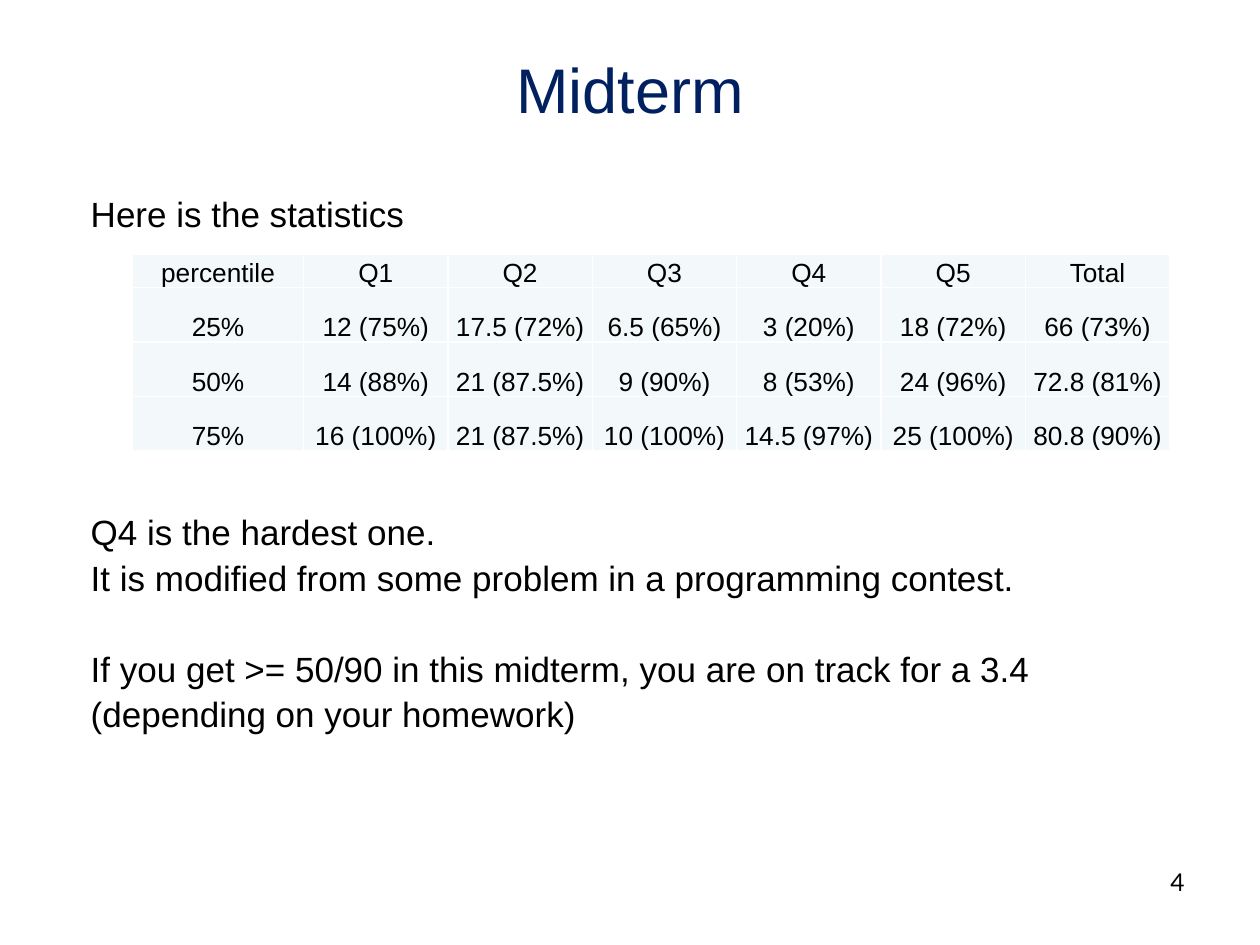
"""Build the midterm statistics slide."""
import dataclasses
import typing

import pptx
import pptx.dml.color
import pptx.enum.text
import pptx.oxml
import pptx.oxml.ns
import pptx.util

Cm = pptx.util.Cm
Pt = pptx.util.Pt
Align = pptx.enum.text.PP_ALIGN
Anchor = pptx.enum.text.MSO_ANCHOR


@dataclasses.dataclass(frozen=True)
class Theme:
    font: str = "Arial"
    number_font: str = "Lato"
    navy: str = "002060"
    black: str = "000000"
    cell_fill: str = "F3F9FA"
    border: str = "FFFFFF"
    title_size: int = 36
    body_size: int = 20
    table_size: int = 15
    number_size: int = 14
    line_pitch: int = 26


THEME = Theme()


@dataclasses.dataclass(frozen=True)
class Line:
    text: str
    lines_before: int = 0


@dataclasses.dataclass(frozen=True)
class TextBlock:
    left: float
    top: float
    width: float
    height: float
    lines: tuple[Line, ...]
    size: int
    font: str = THEME.font
    color: str = THEME.black
    align: Align = Align.LEFT
    inset_left: float = 0.25
    inset_top: float = 0.13
    line_pitch: typing.Optional[int] = None


@dataclasses.dataclass(frozen=True)
class Percentile:
    label: str
    scores: tuple[str, ...]


HEADING = Percentile("percentile", ("Q1", "Q2", "Q3", "Q4", "Q5", "Total"))
PERCENTILES = (
    Percentile("25%", ("12 (75%)", "17.5 (72%)", "6.5 (65%)", "3 (20%)", "18 (72%)", "66 (73%)")),
    Percentile("50%", ("14 (88%)", "21 (87.5%)", "9 (90%)", "8 (53%)", "24 (96%)", "72.8 (81%)")),
    Percentile("75%", ("16 (100%)", "21 (87.5%)", "10 (100%)", "14.5 (97%)", "25 (100%)", "80.8 (90%)")),
)

TITLE = TextBlock(1.27, 0.76, 22.86, 3.18, (Line("Midterm"),), THEME.title_size,
                  color=THEME.navy, align=Align.CENTER, inset_top=0.26)
REMARKS = TextBlock(
    1.27, 3.68, 22.86, 13.34,
    (
        Line("Here is the statistics"),
        Line("Q4 is the hardest one.", lines_before=6),
        Line("It is modified from some problem in a programming contest."),
        Line("If you get >= 50/90 in this midterm, you are on track for a 3.4", lines_before=1),
        Line("(depending on your homework)"),
    ),
    THEME.body_size, inset_left=0.56, line_pitch=THEME.line_pitch)
PAGE_NUMBER = TextBlock(18.21, 17.35, 5.92, 1.32, (Line("4"),), THEME.number_size,
                        font=THEME.number_font, align=Align.RIGHT)


def add_run(paragraph, text: str, size: int, font: str, color: str) -> None:
    run = paragraph.add_run()
    run.text = text
    run.font.size = Pt(size)
    run.font.name = font
    run.font.color.rgb = pptx.dml.color.RGBColor.from_string(color)


def add_text_block(slide, block: TextBlock) -> None:
    box = slide.shapes.add_textbox(Cm(block.left), Cm(block.top), Cm(block.width), Cm(block.height))
    frame = box.text_frame
    frame.word_wrap = True
    frame.vertical_anchor = Anchor.TOP
    frame.margin_left = Cm(block.inset_left)
    frame.margin_top = Cm(block.inset_top)
    for index, line in enumerate(block.lines):
        paragraph = frame.add_paragraph() if index else frame.paragraphs[0]
        paragraph.alignment = block.align
        if block.line_pitch:
            paragraph.line_spacing = Pt(block.line_pitch)
            if line.lines_before:
                paragraph.space_before = Pt(line.lines_before * block.line_pitch)
        add_run(paragraph, line.text, block.size, block.font, block.color)


def add_cell_borders(cell) -> None:
    properties = cell._tc.get_or_add_tcPr()
    for position, side in enumerate(("lnL", "lnR", "lnT", "lnB")):
        border = pptx.oxml.parse_xml(
            f'<a:{side} {pptx.oxml.ns.nsdecls("a")} w="{Pt(1)}"><a:solidFill>'
            f'<a:srgbClr val="{THEME.border}"/></a:solidFill></a:{side}>')
        properties.insert(position, border)


def fill_cell(cell, text: str) -> None:
    cell.fill.solid()
    cell.fill.fore_color.rgb = pptx.dml.color.RGBColor.from_string(THEME.cell_fill)
    cell.vertical_anchor = Anchor.BOTTOM
    cell.margin_left = cell.margin_right = cell.margin_top = Cm(0.03)
    cell.margin_bottom = Cm(0)
    paragraph = cell.text_frame.paragraphs[0]
    paragraph.alignment = Align.CENTER
    add_run(paragraph, text, THEME.table_size, THEME.font, THEME.black)
    add_cell_borders(cell)


def add_statistics(slide, records: tuple[Percentile, ...]) -> None:
    widths = [3.45] + [2.91] * len(HEADING.scores)
    heights = [0.6] + [1.1] * (len(records) - 1)
    statistics = slide.shapes.add_table(
        len(heights), len(widths), Cm(2.67), Cm(5.13), Cm(sum(widths)), Cm(sum(heights))).table
    for column, width in zip(statistics.columns, widths):
        column.width = Cm(width)
    for row, height, record in zip(statistics.rows, heights, records):
        row.height = Cm(height)
        for cell, text in zip(row.cells, (record.label, *record.scores)):
            fill_cell(cell, text)


def main() -> None:
    presentation = pptx.Presentation()
    presentation.slide_width = Cm(25.4)
    presentation.slide_height = Cm(19.05)
    slide = presentation.slides.add_slide(presentation.slide_layouts[6])
    for block in (TITLE, REMARKS, PAGE_NUMBER):
        add_text_block(slide, block)
    add_statistics(slide, (HEADING, *PERCENTILES))
    presentation.save("out.pptx")


if __name__ == "__main__":
    main()
